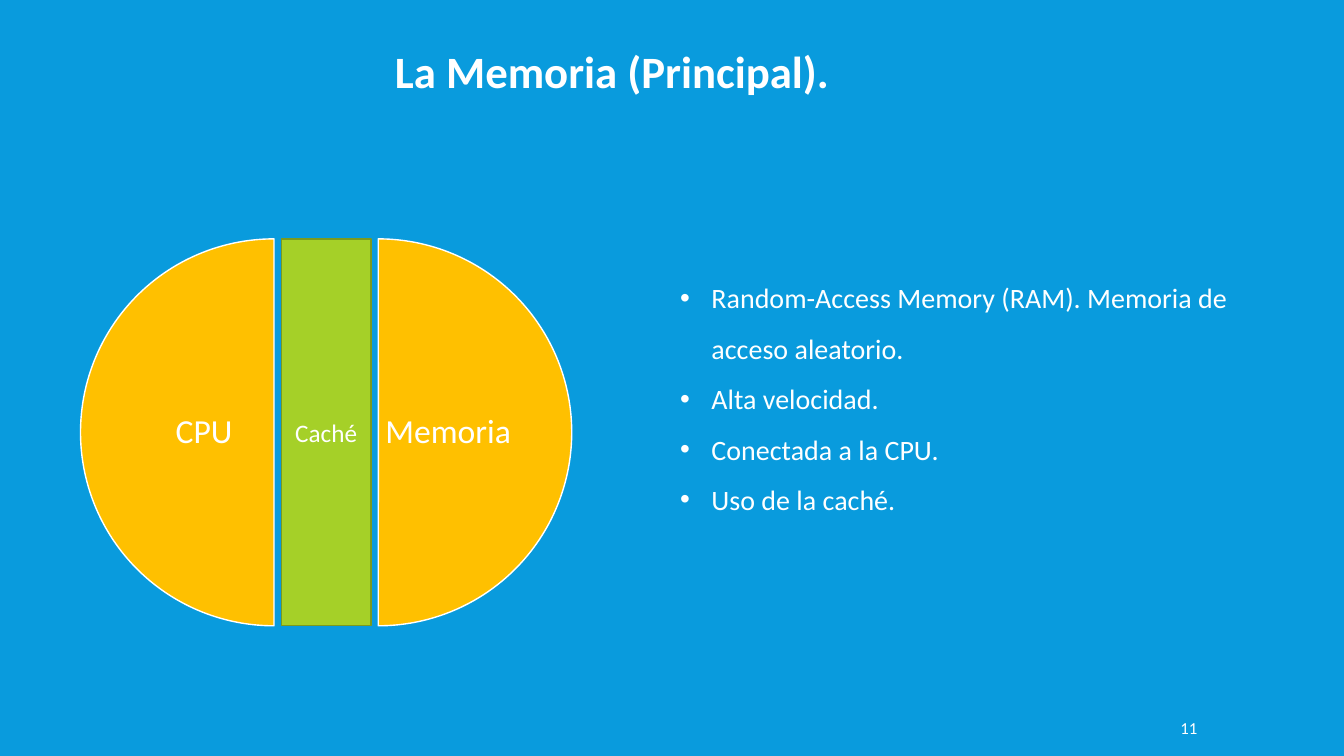
from lxml import etree
from pptx import Presentation
from pptx import util as u
from pptx.dml import color
from pptx.enum import shapes, text
from pptx.oxml import ns

Cm = u.Cm
BLUE, WHITE, AMBER = "099BDD", "FFFFFF", "FFC000"
GREEN, DARK_GREEN = "A5D028", "7A9A1E"
BULLETS = [
    "Random-Access Memory (RAM). Memoria de acceso aleatorio.",
    "Alta velocidad.",
    "Conectada a la CPU.",
    "Uso de la caché.",
]


def rgb(value):
    return color.RGBColor.from_string(value)


def apply(target, values):
    for name, value in values.items():
        setattr(target, name, value)


def place(shape, box):
    apply(shape, dict(zip(("left", "top", "width", "height"), map(Cm, box))))


def write(shape, lines, size, frame=None, paragraph_format=None, bold=False):
    text_frame = shape.text_frame
    apply(text_frame, {"word_wrap": True, "auto_size": text.MSO_AUTO_SIZE.NONE,
                       "vertical_anchor": text.MSO_ANCHOR.TOP, **(frame or {})})
    text_frame.text = "\n".join(lines)
    for paragraph in text_frame.paragraphs:
        apply(paragraph, {"alignment": text.PP_ALIGN.LEFT, **(paragraph_format or {})})
        font = paragraph.runs[0].font
        apply(font, {"name": "Calibri", "size": u.Pt(size), "bold": bold})
        font.color.rgb = rgb(WHITE)


def add_filled(slide, kind, box, fill, line):
    shape = slide.shapes.add_shape(kind, *map(Cm, box))
    shape.shadow.inherit = False
    shape.fill.solid()
    shape.fill.fore_color.rgb = rgb(fill)
    shape.line.color.rgb = rgb(line)
    shape.line.width = u.Pt(1)
    return shape


def add_text(slide, box, lines, size, **formats):
    shape = slide.shapes.add_textbox(*map(Cm, box))
    write(shape, lines, size, **formats)
    return shape


def add_title(slide, box):
    title = slide.shapes.title
    place(title, box)
    write(title, ["La Memoria (Principal)."], 32, {"word_wrap": False}, bold=True)


def add_memory_diagram(slide, box):
    left, top, width, height = box
    label_width, label_height, label_inset = 3.43, 6.86, 1.4
    cache_width = 2.26
    centred = {"alignment": text.PP_ALIGN.CENTER}
    margins = dict.fromkeys(("margin_left", "margin_top", "margin_right", "margin_bottom"), Cm(0.08))
    label_top = top + (height - label_height) / 2
    halves = [
        ("Memoria", left + width - height, (162, 54), left + width - label_inset - label_width),
        ("CPU", left, (54, 162), left + label_inset),
    ]
    for name, pie_left, angles, label_left in halves:
        pie = add_filled(slide, shapes.MSO_SHAPE.PIE, (pie_left, top, height, height), AMBER, WHITE)
        for index, angle in enumerate(angles):
            pie.adjustments[index] = angle
        add_text(slide, (label_left, label_top, label_width, label_height), [name], 24,
                 frame={"vertical_anchor": text.MSO_ANCHOR.MIDDLE, **margins},
                 paragraph_format={"line_spacing": 0.9, **centred})
    cache_left = left + (width - cache_width) / 2
    cache = add_filled(slide, shapes.MSO_SHAPE.RECTANGLE,
                       (cache_left, top, cache_width, height), GREEN, DARK_GREEN)
    write(cache, ["Caché"], 18, {"vertical_anchor": text.MSO_ANCHOR.MIDDLE}, centred)


def add_bullets(slide, box):
    shape = add_text(slide, box, BULLETS, 20, paragraph_format={"line_spacing": 1.5})
    for paragraph in shape.text_frame.paragraphs:
        properties = paragraph._p.get_or_add_pPr()
        properties.set("marL", str(Cm(0.79)))
        properties.set("indent", str(-Cm(0.79)))
        etree.SubElement(properties, ns.qn("a:buFont")).set("typeface", "Arial")
        etree.SubElement(properties, ns.qn("a:buChar")).set("char", "•")


def add_page_number(slide, box):
    add_text(slide, box, ["11"], 12,
             frame={"vertical_anchor": text.MSO_ANCHOR.MIDDLE, "margin_left": Cm(0.13)})


def main():
    presentation = Presentation()
    apply(presentation, {"slide_width": Cm(33.87), "slide_height": Cm(19.05)})
    slide = presentation.slides.add_slide(presentation.slide_layouts[5])
    slide.background.fill.solid()
    slide.background.fill.fore_color.rgb = rgb(BLUE)
    add_title(slide, (9.7, 0.97, 11.91, 1.63))
    add_memory_diagram(slide, (2.03, 6.02, 12.38, 9.75))
    add_bullets(slide, (16.89, 6.53, 15.8, 7.95))
    add_page_number(slide, (29.62, 17.83, 2.62, 1.02))
    presentation.save("out.pptx")


if __name__ == "__main__":
    main()
